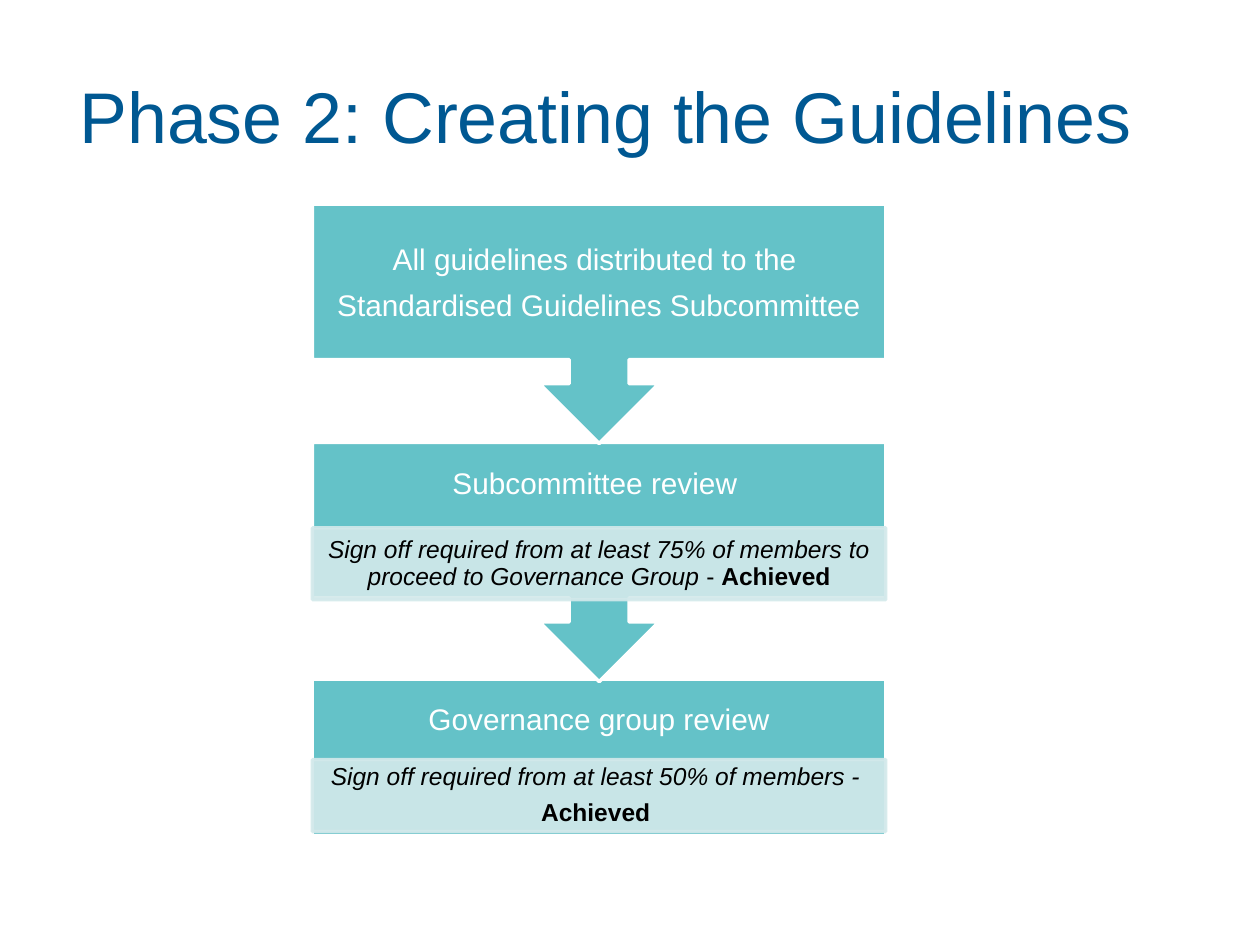
from lxml import etree
from pptx import Presentation
from pptx.dml.color import RGBColor
from pptx.enum.shapes import MSO_SHAPE
from pptx.enum.text import MSO_ANCHOR, PP_ALIGN
from pptx.oxml.ns import qn
from pptx.util import Inches, Pt

RECTANGLE = MSO_SHAPE.RECTANGLE
ARROW_CALLOUT = MSO_SHAPE.UP_ARROW_CALLOUT
MIDDLE = MSO_ANCHOR.MIDDLE
CENTER = PP_ALIGN.CENTER

COLORS = {"title": "005892", "step": "64C2C8", "note": "D3E9EB",
          "white": "FFFFFF", "black": "000000"}
FONT = "Arial"
TITLE = "Phase 2: Creating the Guidelines"

# Paragraphs are lists of (text, style) runs.
STEPS = [
    {"top": 1.62, "height": 1.9, "shape": ARROW_CALLOUT,
     "heading_height": 1.23, "line_spacing": 1.0,
     "heading": [[("All guidelines distributed to the ", "plain")],
                 [("Standardised Guidelines Subcommittee", "plain")]]},
    {"top": 3.51, "height": 1.9, "shape": ARROW_CALLOUT,
     "heading_height": 0.67, "line_spacing": 0.9,
     "heading": [[("Subcommittee review ", "plain")]],
     "note_top": 4.19,
     "note": [[("Sign off required from at least 75% of members to "
                "proceed to Governance Group ", "italic"),
               ("- ", "plain"), ("Achieved", "bold")]]},
    {"top": 5.39, "height": 1.24, "shape": RECTANGLE,
     "heading_height": 0.67, "line_spacing": 0.9,
     "heading": [[("Governance group review", "plain")]],
     "note_top": 6.03,
     "note": [[("Sign off required from at least 50% of members - ", "italic")],
              [("Achieved ", "bold")]]},
]
LEFT, WIDTH, NOTE_HEIGHT = 2.48, 4.55, 0.57
NOTE_OPACITY = 90


def rgb(name):
    return RGBColor.from_string(COLORS[name])


def set_opacity(shape, percent):
    for color in shape._element.spPr.iter(qn("a:srgbClr")):
        etree.SubElement(color, qn("a:alpha"), val=str(percent * 1000))


def add_box(slide, kind, top, height, fill, line):
    shape = slide.shapes.add_shape(
        kind, Inches(LEFT), Inches(top), Inches(WIDTH), Inches(height))
    shape.shadow.inherit = False
    shape.fill.solid()
    shape.fill.fore_color.rgb = rgb(fill)
    shape.line.color.rgb = rgb(line)
    shape.line.width = Pt(2)
    return shape


def add_text(slide, box, paragraphs, size, color, margins=(0, 0),
             alignment=None, line_spacing=None, space_after=None):
    frame = slide.shapes.add_textbox(*map(Inches, box)).text_frame
    frame.word_wrap = True
    frame.vertical_anchor = MIDDLE
    frame.margin_left = frame.margin_right = Inches(margins[0])
    frame.margin_top = frame.margin_bottom = Inches(margins[1])
    for index, runs in enumerate(paragraphs):
        paragraph = frame.add_paragraph() if index else frame.paragraphs[0]
        paragraph.alignment = alignment
        paragraph.line_spacing = line_spacing
        paragraph.space_after = space_after
        paragraph.font.name = FONT
        paragraph.font.size = Pt(size)
        paragraph.font.color.rgb = rgb(color)
        for text, style in runs:
            run = paragraph.add_run()
            run.text = text
            if style == "italic":
                run.font.italic = True
            elif style == "bold":
                run.font.bold = True


def add_step(slide, step):
    shape = add_box(slide, step["shape"], step["top"], step["height"],
                    "step", "white")
    if step["shape"] == ARROW_CALLOUT:
        shape.rotation = 180
    add_text(slide, (LEFT, step["top"], WIDTH, step["heading_height"]),
             step["heading"], 17, "white", (0.13, 0.13), CENTER,
             step["line_spacing"], Pt(6))
    if "note" in step:
        note = add_box(slide, RECTANGLE, step["note_top"], NOTE_HEIGHT,
                       "note", "note")
        set_opacity(note, NOTE_OPACITY)
        add_text(slide, (LEFT, step["note_top"], WIDTH, NOTE_HEIGHT),
                 step["note"], 14, "black", (0.11, 0.02), CENTER,
                 step["line_spacing"], Pt(5))


def main():
    presentation = Presentation()
    presentation.slide_width = Inches(10)
    presentation.slide_height = Inches(7.5)
    slide = presentation.slides.add_slide(presentation.slide_layouts[6])
    add_text(slide, (0.63, 0.62, 8.68, 0.64), [[(TITLE, "plain")]], 41,
             "title", line_spacing=Pt(45.4))
    # Last step first, so that each arrow tip lies over the step below it.
    for step in reversed(STEPS):
        add_step(slide, step)
    presentation.save("out.pptx")


if __name__ == "__main__":
    main()
